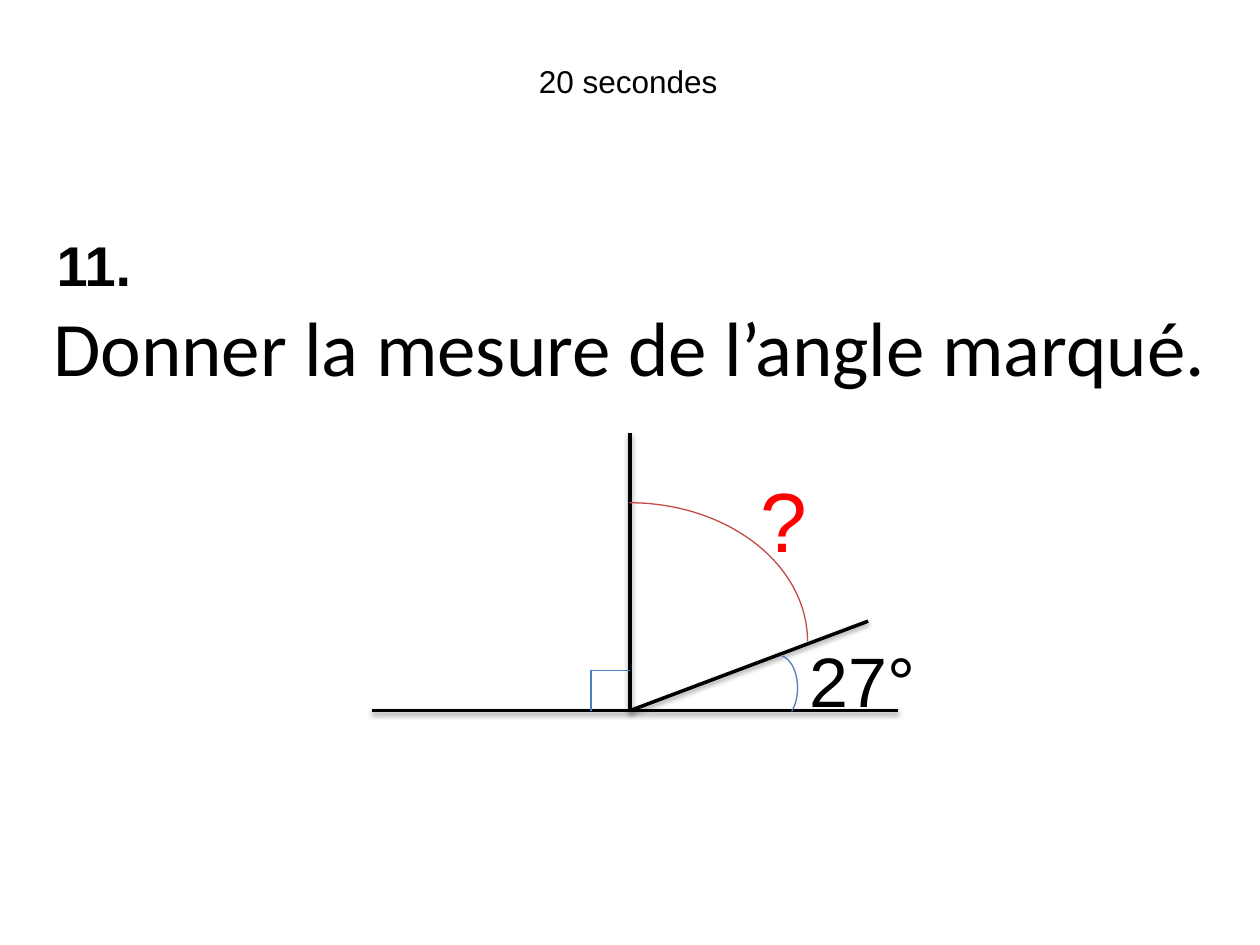
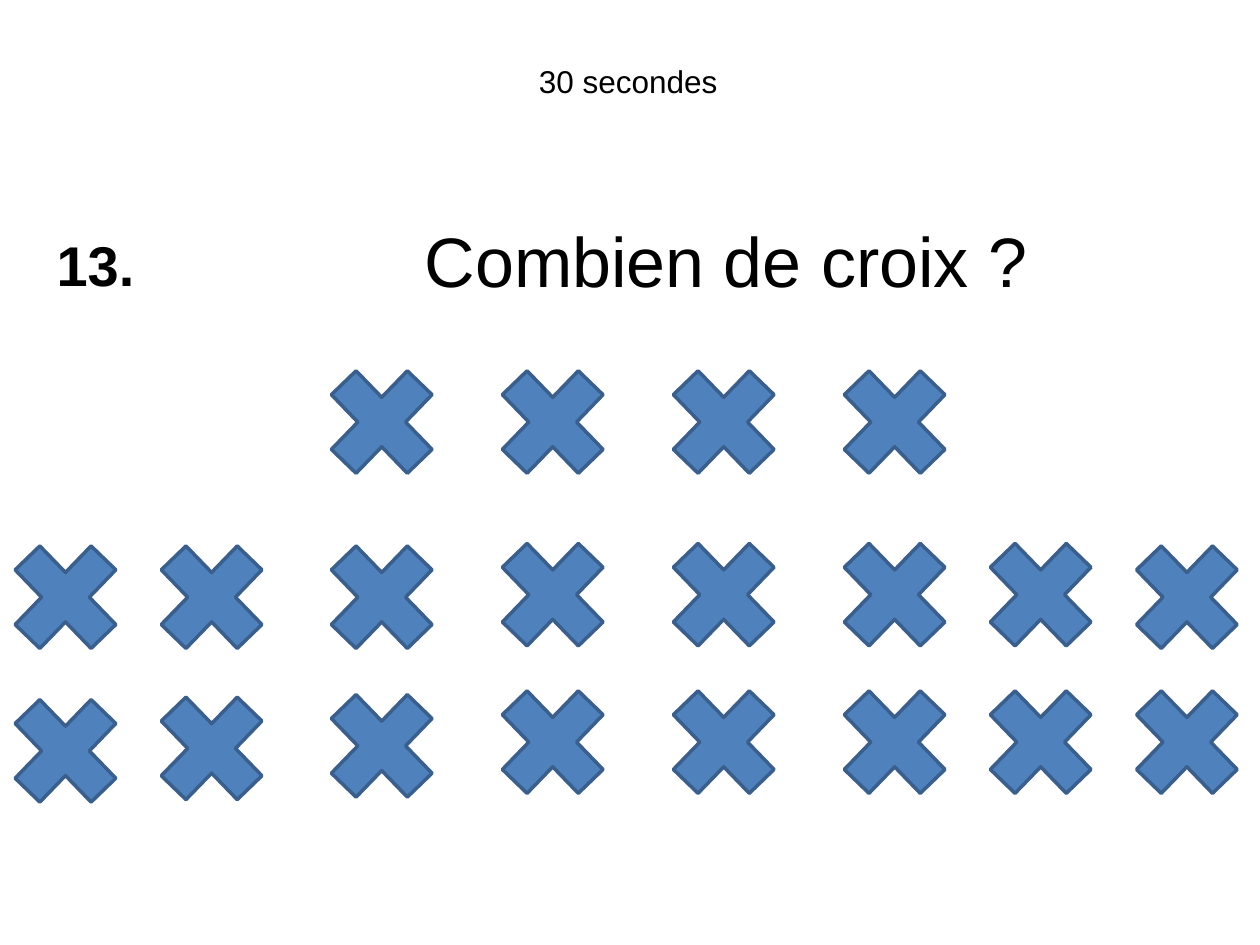
from dataclasses import dataclass

from lxml.etree import SubElement
from pptx import Presentation
from pptx.dml.color import RGBColor
from pptx.enum.shapes import MSO_CONNECTOR, MSO_SHAPE
from pptx.enum.text import MSO_ANCHOR, MSO_AUTO_SIZE, PP_ALIGN
from pptx.oxml.ns import qn
from pptx.util import Inches, Pt

COLUMNS, ROWS = 100, 75


@dataclass(frozen=True)
class Theme:
    ink: str = "000000"
    unknown: str = "FF0000"
    unknown_arc: str = "BF4C48"
    known_arc: str = "4B7EBC"
    cross: str = "4F81BD"
    cross_edge: str = "3A5F8C"
    plain_font: str = "Arial"
    title_font: str = "Calibri"
    timer: int = 18
    number: int = 32
    large: int = 40
    title: int = 44
    mark: int = 48
    thick: float = 2
    thin: float = 0.75


class QuizDeck:
    def __init__(self, theme):
        self.theme = theme
        self.deck = Presentation()
        self.deck.slide_width, self.deck.slide_height = Inches(10), Inches(7.5)
        self.slide = None

    def x(self, columns):
        return round(self.deck.slide_width * columns / COLUMNS)

    def y(self, rows):
        return round(self.deck.slide_height * rows / ROWS)

    def place(self, left, top, width, height):
        return self.x(left), self.y(top), self.x(width), self.y(height)

    def fill_text(self, holder, words, size, align=PP_ALIGN.LEFT, color=None, font=None, bold=False):
        frame = holder.text_frame
        frame.text = words
        frame_format = {
            "word_wrap": True,
            "auto_size": MSO_AUTO_SIZE.SHAPE_TO_FIT_TEXT,
            "vertical_anchor": MSO_ANCHOR.TOP,
        }
        for name, value in frame_format.items():
            setattr(frame, name, value)
        paragraph = frame.paragraphs[0]
        paragraph.alignment = align
        letters = paragraph.runs[0].font
        letter_format = {"size": Pt(size), "name": font or self.theme.plain_font, "bold": bold}
        for name, value in letter_format.items():
            setattr(letters, name, value)
        letters.color.rgb = RGBColor.from_string(color or self.theme.ink)

    def question(self, number, seconds, title, area, **style):
        self.slide = self.deck.slides.add_slide(self.deck.slide_layouts[5])
        heading = self.slide.shapes.title
        for name, value in zip(("left", "top", "width", "height"), self.place(*area)):
            setattr(heading, name, value)
        self.fill_text(heading, title, **style)
        self.text(f"{number}.", (3.5, 17.8, 10.2, 6.4), size=self.theme.number, bold=True)
        self.text(f"{seconds} secondes", (35, 4.4, 29.7, 4),
                  size=self.theme.timer, align=PP_ALIGN.CENTER)

    def text(self, words, area, **style):
        self.fill_text(self.slide.shapes.add_textbox(*self.place(*area)), words, **style)

    def stroke(self, element, color, width):
        element.line.color.rgb = RGBColor.from_string(color)
        element.line.width = Pt(width)

    def line(self, start, end, color, width, shadow=False):
        segment = self.slide.shapes.add_connector(
            MSO_CONNECTOR.STRAIGHT,
            self.x(start[0]), self.y(start[1]), self.x(end[0]), self.y(end[1]))
        self.stroke(segment, color, width)
        effects = SubElement(segment._element.spPr, qn("a:effectLst"))
        if shadow:
            cast = SubElement(effects, qn("a:outerShdw"), blurRad=str(Pt(3.1)),
                              dist=str(Pt(1.6)), dir="5400000", rotWithShape="0")
            tint = SubElement(cast, qn("a:srgbClr"), val=self.theme.ink)
            SubElement(tint, qn("a:alpha"), val="38000")

    def shape(self, preset, area, color, width, fill=None):
        figure = self.slide.shapes.add_shape(preset, *self.place(*area))
        figure.shadow.inherit = False
        if fill:
            figure.fill.solid()
            figure.fill.fore_color.rgb = RGBColor.from_string(fill)
        else:
            figure.fill.background()
        self.stroke(figure, color, width)
        return figure

    def arc(self, area, color, first_degree=270, last_degree=0):
        curve = self.shape(MSO_SHAPE.ARC, area, color, self.theme.thin)
        for index, degree in enumerate((first_degree, last_degree)):
            curve.adjustments[index] = degree * 0.6


def draw_angle_question(quiz):
    theme = quiz.theme
    quiz.question(11, 20, "Donner la mesure de l’angle marqué.", (0, 23.3, 100, 8.4),
                  size=theme.title, font=theme.title_font, align=PP_ALIGN.CENTER)

    vertex = 50, 56.4
    for start, end in (((50, 34.4), vertex), ((29.5, 56.4), (71.3, 56.4)), (vertex, (68.9, 49.3))):
        quiz.line(start, end, theme.ink, theme.thick, shadow=True)

    corner = 46.9, 53.2
    for end in ((vertex[0], corner[1]), (corner[0], vertex[1])):
        quiz.line(corner, end, theme.known_arc, theme.thin)

    quiz.arc((60.2, 52, 3.1, 5.2), theme.known_arc, 274.78, 60.03)
    quiz.text("27°", (63.3, 50.1, 12.9, 7.7), size=theme.large)
    quiz.arc((35.8, 39.9, 28.3, 22), theme.unknown_arc)
    quiz.text("?", (59.4, 36.7, 12.9, 9.1), size=theme.mark, color=theme.unknown)


def draw_cross_question(quiz):
    theme = quiz.theme
    quiz.question(13, 30, "Combien de croix ?", (32.7, 16.8, 50.4, 7.7), size=theme.large)

    middle_columns = [24.5 + 13.57 * step for step in range(4)]
    cross_columns = [-0.6, 11, *middle_columns, 76.8, 88.4]
    cross_rows = (
        (2, [27.5] * 4),
        (0, [41.4] * 3 + [41.2] * 4 + [41.4]),
        (0, [53.6, 53.4, 53.2] + [52.9] * 5),
    )
    for first_column, tops in cross_rows:
        for left, top in zip(cross_columns[first_column:], tops):
            quiz.shape(MSO_SHAPE.MATH_MULTIPLY, (left, top, 11.6, 12),
                       theme.cross_edge, theme.thick, fill=theme.cross)


def main():
    quiz = QuizDeck(Theme())
    draw_angle_question(quiz)
    draw_cross_question(quiz)
    quiz.deck.save("out.pptx")


if __name__ == "__main__":
    main()
